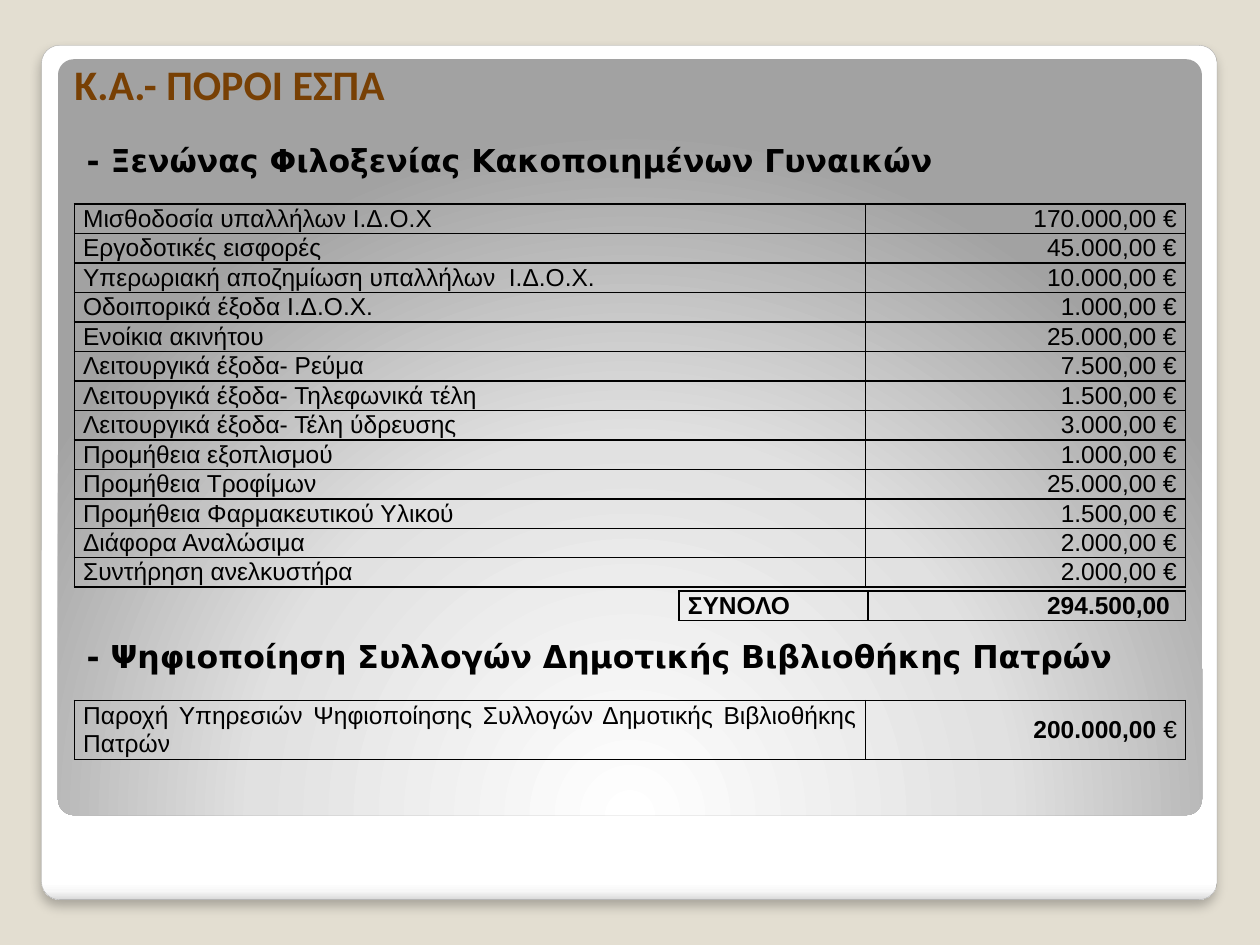
from lxml import etree
from pptx import Presentation
from pptx.dml.color import RGBColor
from pptx.enum.shapes import MSO_SHAPE as SHAPE
from pptx.enum.text import MSO_ANCHOR as ANCHOR, MSO_AUTO_SIZE as AUTO_SIZE, PP_ALIGN as ALIGN
from pptx.oxml import parse_xml
from pptx.oxml.ns import nsdecls, qn
from pptx.util import Inches, Pt

TITLE = "Κ.Α.- ΠΟΡΟΙ ΕΣΠΑ"
HEADINGS = [
    ("- Ξενώνας Φιλοξενίας Κακοποιημένων Γυναικών", 1.07),
    ("- Ψηφιοποίηση Συλλογών Δημοτικής Βιβλιοθήκης Πατρών", 5.01),
]
HOSTEL_COSTS = [
    ("Mισθοδοσία υπαλλήλων Ι.Δ.Ο.Χ", "170.000,00 €"),
    ("Εργοδοτικές εισφορές", "45.000,00 €"),
    ("Υπερωριακή αποζημίωση υπαλλήλων  Ι.Δ.Ο.Χ.", "10.000,00 €"),
    ("Οδοιπορικά έξοδα Ι.Δ.Ο.Χ.", "1.000,00 €"),
    ("Ενοίκια ακινήτου", "25.000,00 €"),
    ("Λειτουργικά έξοδα- Ρεύμα", "7.500,00 €"),
    ("Λειτουργικά έξοδα- Τηλεφωνικά τέλη", "1.500,00 €"),
    ("Λειτουργικά έξοδα- Τέλη ύδρευσης", "3.000,00 €"),
    ("Προμήθεια εξοπλισμού", "1.000,00 €"),
    ("Προμήθεια Τροφίμων", "25.000,00 €"),
    ("Προμήθεια Φαρμακευτικού Υλικού", "1.500,00 €"),
    ("Διάφορα Αναλώσιμα", "2.000,00 €"),
    ("Συντήρηση ανελκυστήρα", "2.000,00 €"),
]
# A cell is plain text, or a list of (text, bold) runs.
TOTAL = [([("ΣΥΝΟΛΟ", True)], [("294.500,00 ", True)])]
LIBRARY_COSTS = [(
    "Παροχή Υπηρεσιών Ψηφιοποίησης Συλλογών Δημοτικής Βιβλιοθήκης Πατρών",
    [("200.000,00 ", True), ("€", False)],
)]

LEFT = 0.59
WIDE_COLUMNS = (6.28, 2.54)
TOTAL_COLUMNS = (1.5, 2.52)
TABLES = [  # rows, left, top, column widths, row height
    (HOSTEL_COSTS, LEFT, 1.62, WIDE_COLUMNS, 0.23),
    (LIBRARY_COSTS, LEFT, 5.56, WIDE_COLUMNS, 0.47),
    (TOTAL, LEFT + sum(WIDE_COLUMNS) - sum(TOTAL_COLUMNS), 4.69, TOTAL_COLUMNS, 0.23),
]
FRAME_STOPS = [(0, "FFFFFF"), (98, "FFFFFF"), (99, "F7F7F7"), (100, "DADADA")]
PANEL_STOPS = [(0, "FFFFFF"), (55, "E1E1E1"), (100, "A2A2A2")]
DOWNWARD = '<a:lin ang="5400000" scaled="0"/>'
FROM_BOTTOM = ('<a:path path="circle">'
               '<a:fillToRect l="50000" t="175000" r="50000" b="-75000"/></a:path>')


def color(value):
    return RGBColor.from_string(value)


def set_all(target, values):
    for name, value in values.items():
        setattr(target, name, value)


def add_run(paragraph, text, size, font, hex_color="000000", bold=False):
    run = paragraph.add_run()
    run.text = text
    set_all(run.font, {"size": Pt(size), "name": font, "bold": bold})
    run.font.color.rgb = color(hex_color)


def add_card(slide, box, stops, direction):
    """Add a slightly rounded rectangle with a gradient fill."""
    card = slide.shapes.add_shape(SHAPE.ROUNDED_RECTANGLE, *map(Inches, box))
    card.adjustments[0] = 0.021
    card.shadow.inherit = False
    card.line.fill.background()
    marks = "".join(f'<a:gs pos="{position * 1000}"><a:srgbClr val="{value}"/></a:gs>'
                    for position, value in stops)
    card._element.spPr.find(qn("a:prstGeom")).addnext(parse_xml(
        f'<a:gradFill {nsdecls("a")} rotWithShape="1"><a:gsLst>{marks}</a:gsLst>'
        f'{direction}</a:gradFill>'))
    return card


def add_drop_shadow(shape):
    effects = shape._element.spPr.find(qn("a:effectLst"))
    effects.append(parse_xml(
        f'<a:outerShdw {nsdecls("a")} blurRad="{Pt(6)}" dist="{Pt(4)}" dir="5400000" '
        'algn="t" rotWithShape="0"><a:srgbClr val="000000"><a:alpha val="25000"/>'
        '</a:srgbClr></a:outerShdw>'))


def add_text(slide, box, text, **font):
    frame = slide.shapes.add_textbox(*map(Inches, box)).text_frame
    set_all(frame, {"word_wrap": True, "auto_size": AUTO_SIZE.SHAPE_TO_FIT_TEXT})
    add_run(frame.paragraphs[0], text, bold=True, **font)
    return frame


def add_title(slide):
    frame = add_text(slide, (LEFT, 0.34, 9, 0.52), TITLE,
                     size=24, font="Calibri", hex_color="784004")
    set_all(frame, {"vertical_anchor": ANCHOR.BOTTOM, "margin_left": 0, "margin_right": 0,
                    "margin_top": Inches(0.07), "margin_bottom": 0})
    paragraph = frame.paragraphs[0]
    set_all(paragraph, {"line_spacing": 1.1, "space_after": Pt(6)})
    properties = paragraph._p.get_or_add_pPr()
    properties.set("marL", str(Inches(0.4)))
    properties.set("indent", str(Inches(-0.4)))


def add_borders(cell):
    properties = cell._tc.get_or_add_tcPr()
    for index, side in enumerate(("lnL", "lnR", "lnT", "lnB")):
        border = etree.Element(qn(f"a:{side}"), w=str(Pt(1)))
        fill = etree.SubElement(border, qn("a:solidFill"))
        etree.SubElement(fill, qn("a:srgbClr"), val="000000")
        properties.insert(index, border)


def fill_cell(cell, content, alignment):
    set_all(cell, {"vertical_anchor": ANCHOR.MIDDLE, "margin_top": 0, "margin_bottom": 0,
                   "margin_left": Inches(0.07), "margin_right": Inches(0.07)})
    cell.fill.background()
    add_borders(cell)
    paragraph = cell.text_frame.paragraphs[0]
    paragraph.alignment = alignment
    runs = [(content, False)] if isinstance(content, str) else content
    for text, bold in runs:
        add_run(paragraph, text, 14, "Arial", bold=bold)


def add_cost_table(slide, rows, left, top, widths, row_height):
    box = (left, top, sum(widths), row_height * len(rows))
    table = slide.shapes.add_table(len(rows), len(widths), *map(Inches, box)).table
    set_all(table, {"first_row": False, "horz_banding": False})
    for column, width in zip(table.columns, widths):
        column.width = Inches(width)
    for row, contents in zip(table.rows, rows):
        row.height = Inches(row_height)
        for cell, content, alignment in zip(row.cells, contents, (ALIGN.JUSTIFY, ALIGN.RIGHT)):
            fill_cell(cell, content, alignment)


def main():
    presentation = Presentation()
    set_all(presentation, {"slide_width": Inches(10), "slide_height": Inches(7.5)})
    slide = presentation.slides.add_slide(presentation.slide_layouts[6])
    slide.background.fill.solid()
    slide.background.fill.fore_color.rgb = color("E3DED1")

    frame = add_card(slide, (0.33, 0.36, 9.33, 6.78), FRAME_STOPS, DOWNWARD)
    frame.line.color.rgb = color("A4A4A4")
    frame.line.width = Pt(0.16)
    add_drop_shadow(frame)
    add_card(slide, (0.46, 0.47, 9.08, 6), PANEL_STOPS, FROM_BOTTOM)

    add_title(slide)
    for text, top in HEADINGS:
        add_text(slide, (LEFT, top, 8.9, 0.4), text, size=18, font="DejaVu Sans")
    for table in TABLES:
        add_cost_table(slide, *table)
    presentation.save("out.pptx")


if __name__ == "__main__":
    main()
